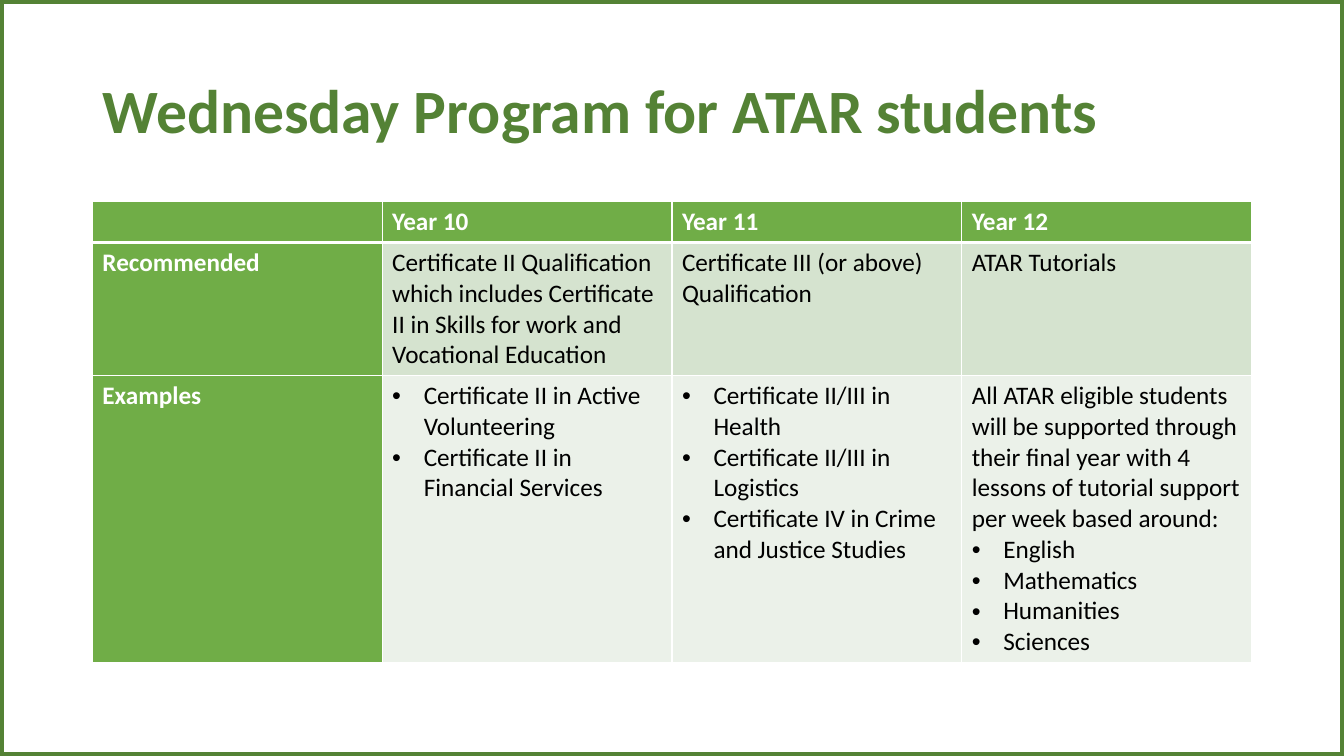
from dataclasses import dataclass

from lxml import etree
from pptx import Presentation
from pptx.dml.color import RGBColor
from pptx.enum import text
from pptx.oxml import ns
from pptx.util import Pt


@dataclass(frozen=True)
class Theme:
    font: str = "Calibri"
    title_size: int = 44
    table_size: int = 18
    dark_green: str = "548235"
    green: str = "70AD47"
    band: str = "D5E3CF"
    pale_band: str = "EBF1E9"
    white: str = "FFFFFF"
    black: str = "000000"


THEME = Theme()
PAGE_WIDTH, PAGE_HEIGHT = 960, 540
ROW_HEIGHTS = (29.2, 95, 205)
ROW_FILLS = (THEME.green, THEME.band, THEME.pale_band)

PROGRAM = [
    [("", []), ("Year 10", []), ("Year 11", []), ("Year 12", [])],
    [
        ("Recommended", []),
        ("Certificate II Qualification which includes Certificate II in "
         "Skills for work and Vocational Education", []),
        ("Certificate III (or above) Qualification", []),
        ("ATAR Tutorials", []),
    ],
    [
        ("Examples", []),
        ("", ["Certificate II in Active Volunteering",
              "Certificate II in Financial Services"]),
        ("", ["Certificate II/III in Health",
              "Certificate II/III in Logistics",
              "Certificate IV in Crime and Justice Studies"]),
        ("All ATAR eligible students will be supported through their final "
         "year with 4 lessons of tutorial support per week based around:",
         ["English", "Mathematics", "Humanities", "Sciences"]),
    ],
]


def style_font(para, size, color, bold):
    font = para.font
    font.name = THEME.font
    font.size = Pt(size)
    font.bold = bold
    font.color.rgb = RGBColor.from_string(color)


def add_bullet(para, indent=22.5):
    properties = para._p.get_or_add_pPr()
    properties.set("marL", str(Pt(indent)))
    properties.set("indent", str(Pt(-indent)))
    etree.SubElement(properties, ns.qn("a:buFont"), typeface="Arial")
    etree.SubElement(properties, ns.qn("a:buChar"), char="•")


def set_borders(cell, color, left, right, top, bottom):
    properties = cell._tc.get_or_add_tcPr()
    widths = {"L": left, "R": right, "T": top, "B": bottom}
    for position, (side, width) in enumerate(widths.items()):
        line = etree.Element(ns.qn(f"a:ln{side}"), w=str(Pt(width)))
        fill = etree.SubElement(line, ns.qn("a:solidFill"))
        etree.SubElement(fill, ns.qn("a:srgbClr"), val=color)
        properties.insert(position, line)


def add_plain_table(page, left, top, width, row_heights, column_count):
    frame = page.shapes.add_table(
        len(row_heights), column_count,
        Pt(left), Pt(top), Pt(width), Pt(sum(row_heights)))
    table = frame.table
    table.first_row = table.horz_banding = False
    for row, height in zip(table.rows, row_heights):
        row.height = Pt(height)
    return table


def add_page_border(page):
    cell = add_plain_table(page, 0, 0, PAGE_WIDTH, [PAGE_HEIGHT], 1).cell(0, 0)
    cell.fill.background()
    set_borders(cell, THEME.dark_green, 6, 6, 6, 6)


def set_title(page, wording):
    title = page.shapes.title
    title.left, title.top = Pt(66), Pt(28.75)
    title.width, title.height = Pt(828), Pt(104.4)
    box = title.text_frame
    box.text = wording
    box.word_wrap = True
    box.auto_size = text.MSO_AUTO_SIZE.NONE
    box.vertical_anchor = text.MSO_ANCHOR.MIDDLE
    para = box.paragraphs[0]
    para.alignment = text.PP_ALIGN.LEFT
    para.line_spacing = 0.9
    style_font(para, THEME.title_size, THEME.dark_green, True)


def fill_cell(cell, intro, bullets, is_heading):
    lines = ([intro] if intro else []) + bullets
    box = cell.text_frame
    box.text = "\n".join(lines)
    color = THEME.white if is_heading else THEME.black
    for para in box.paragraphs:
        style_font(para, THEME.table_size, color, is_heading)
        if para.text in bullets:
            add_bullet(para)


def add_program_table(page):
    table = add_plain_table(page, 66, 144, 828, ROW_HEIGHTS, len(PROGRAM[0]))
    for row, entries in enumerate(PROGRAM):
        for column, (intro, bullets) in enumerate(entries):
            cell = table.cell(row, column)
            is_heading = row == 0 or column == 0
            fill_cell(cell, intro, bullets, is_heading)
            cell.fill.solid()
            cell.fill.fore_color.rgb = RGBColor.from_string(
                THEME.green if is_heading else ROW_FILLS[row])
            set_borders(cell, THEME.white, 1, 1,
                        top=3 if row == 1 else 1,
                        bottom=3 if row == 0 else 1)


def main():
    deck = Presentation()
    deck.slide_width, deck.slide_height = Pt(PAGE_WIDTH), Pt(PAGE_HEIGHT)
    page = deck.slides.add_slide(deck.slide_layouts.get_by_name("Title Only"))
    add_page_border(page)
    set_title(page, "Wednesday Program for ATAR students")
    add_program_table(page)
    deck.save("out.pptx")


if __name__ == "__main__":
    main()
